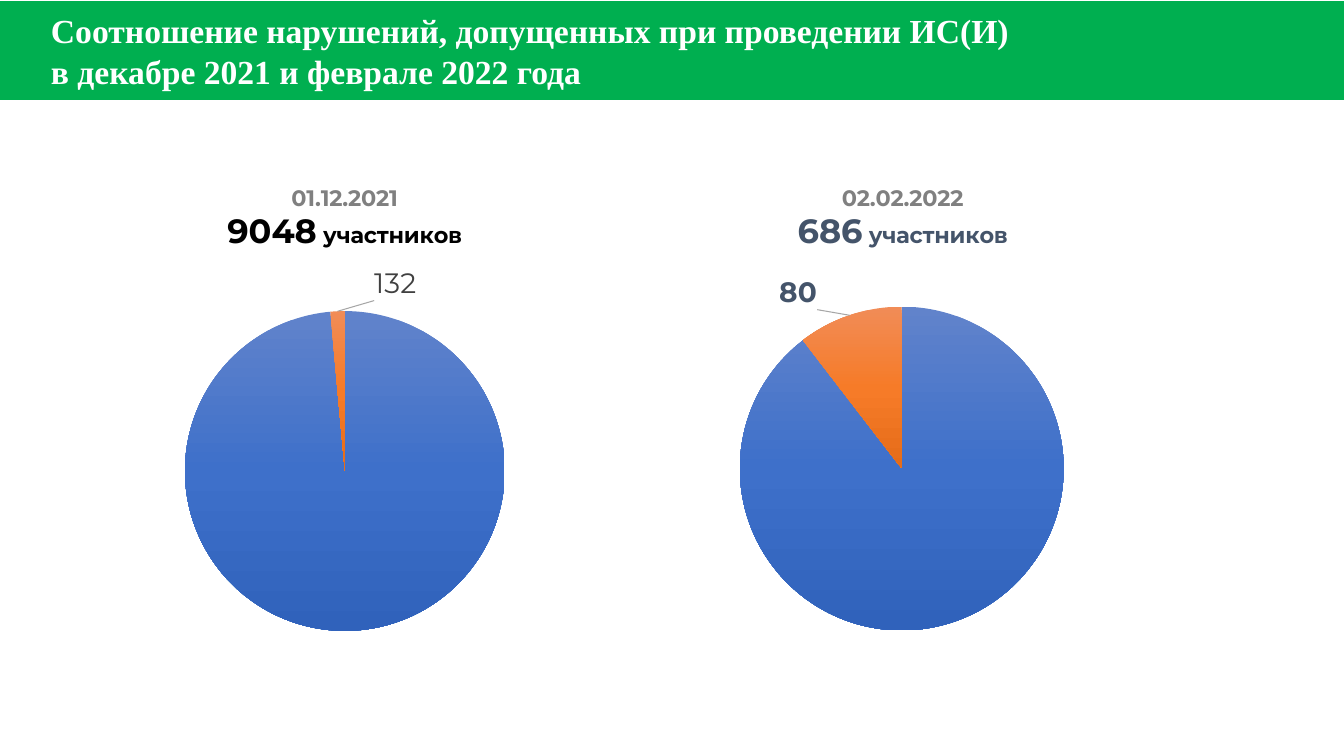
import pptx
import pptx.chart.data
import pptx.dml.color
import pptx.enum.chart
import pptx.oxml
import pptx.oxml.ns
import pptx.util
from pptx.util import Pt

COLORS = {
    "banner": "00AF50", "white": "FFFFFF", "black": "000000",
    "date": "808080", "slate": "44546A", "label": "404040", "leader": "A6A6A6",
}
SLICE_GRADIENTS = [("6183CB", "3E70CA", "3062BB"), ("F18C57", "F67B28", "E56C19")]
NS = pptx.oxml.ns.nsdecls("c", "a")


def style(font, face, size, color, bold):
    font.name, font.size, font.bold = face, Pt(size), bold
    font.color.rgb = pptx.dml.color.RGBColor.from_string(COLORS[color])


def layout_xml(inner=False, **places):
    target = '<c:layoutTarget val="inner"/><c:xMode val="edge"/><c:yMode val="edge"/>' if inner else ""
    values = "".join(f'<c:{key} val="{value}"/>' for key, value in places.items())
    return pptx.oxml.parse_xml(
        f"<c:layout {NS}><c:manualLayout>{target}{values}</c:manualLayout></c:layout>")


deck = pptx.Presentation()
deck.slide_width, deck.slide_height = Pt(960), Pt(540)
slide = deck.slides.add_slide(deck.slide_layouts[6])

# Pies: one per date, participants against violations
exams = [
    dict(date="01.12.2021", people=9048, violations=132, left=73.4, width=345.6,
         heading="black", label="label", bold=False,
         pie=dict(x=0.17, y=0.304, w=0.661, h=0.667), shift=dict(x=0.12, y=-0.01)),
    dict(date="02.02.2022", people=686, violations=80, left=427, width=435.6,
         heading="slate", label="slate", bold=True,
         pie=dict(x=0.233, y=0.295, w=0.531, h=0.675), shift=dict(x=-0.05, y=0)),
]
for exam in exams:
    data = pptx.chart.data.CategoryChartData()
    data.categories = ["1", "2"]
    data.add_series("Series 1", (exam["people"], exam["violations"]))
    chart = slide.shapes.add_chart(
        pptx.enum.chart.XL_CHART_TYPE.PIE, Pt(exam["left"]), Pt(118),
        Pt(exam["width"]), Pt(342.7), data).chart
    style(chart.font, "Calibri", 10, "black", False)
    chart.has_legend = False

    # Heading: date, then number of participants
    heading = chart.chart_title.text_frame
    date_line, people_line = heading.paragraphs[0], heading.add_paragraph()
    for line, text, size, color in [
        (date_line, exam["date"], 16, "date"),
        (people_line, str(exam["people"]), 24, exam["heading"]),
        (people_line, " участников", 16, exam["heading"]),
    ]:
        run = line.add_run()
        run.text = text
        style(run.font, "Montserrat", size, color, True)

    # Pie size and slice gradients
    plot_area = chart.plots[0]._element.getparent()
    for old in plot_area.findall(pptx.oxml.ns.qn("c:layout")):
        plot_area.remove(old)
    plot_area.insert(0, layout_xml(inner=True, **exam["pie"]))
    chart.plots[0].vary_by_categories = True
    series = chart.plots[0].series[0]
    for index, shades in enumerate(SLICE_GRADIENTS):
        stops = "".join(f'<a:gs pos="{pos}"><a:srgbClr val="{shade}"/></a:gs>'
                        for pos, shade in zip((0, 50000, 100000), shades))
        slice_format = series.points[index].format
        slice_format.line.fill.background()
        slice_format.fill.background()
        no_fill = slice_format.fill._xPr.find(pptx.oxml.ns.qn("a:noFill"))
        no_fill.getparent().replace(no_fill, pptx.oxml.parse_xml(
            f'<a:gradFill {NS} rotWithShape="1"><a:gsLst>{stops}</a:gsLst>'
            '<a:lin ang="5400000" scaled="0"/></a:gradFill>'))

    # Value label with leader line on the violations slice only
    labels = series.data_labels
    labels.show_value = True
    labels.position = pptx.enum.chart.XL_LABEL_POSITION.BEST_FIT
    style(labels.font, "Montserrat", 20, exam["label"], exam["bold"])
    count = series.points[1].data_label
    style(count.font, "Montserrat", 20, exam["label"], exam["bold"])
    count.position = pptx.enum.chart.XL_LABEL_POSITION.BEST_FIT
    labels_xml = labels._element
    labels_xml.find(pptx.oxml.ns.qn("c:dLbl")).insert(1, layout_xml(**exam["shift"]))
    labels_xml.insert(0, pptx.oxml.parse_xml(
        f'<c:dLbl {NS}><c:idx val="0"/><c:delete val="1"/></c:dLbl>'))
    for old in labels_xml.findall(pptx.oxml.ns.qn("c:showLeaderLines")):
        labels_xml.remove(old)
    labels_xml.append(pptx.oxml.parse_xml(f'<c:showLeaderLines {NS} val="1"/>'))
    labels_xml.append(pptx.oxml.parse_xml(
        f'<c:leaderLines {NS}><c:spPr><a:ln w="9525"><a:solidFill>'
        f'<a:srgbClr val="{COLORS["leader"]}"/></a:solidFill></a:ln></c:spPr></c:leaderLines>'))

# Banner across the top
outline = slide.shapes.build_freeform(0, Pt(71.3))
outline.add_line_segments([(Pt(961), Pt(71.3)), (Pt(961), Pt(0.7)), (0, Pt(0.7))], close=True)
banner = outline.convert_to_shape()
banner.shadow.inherit = False
banner.fill.solid()
banner.fill.fore_color.rgb = pptx.dml.color.RGBColor.from_string(COLORS["banner"])
banner.line.fill.background()

# Slide title
title = slide.shapes.add_textbox(Pt(36.4), Pt(6.5), Pt(912), Pt(59)).text_frame
title.word_wrap = True
title.margin_left = title.margin_right = title.margin_bottom = 0
title.margin_top = Pt(0.8)
sentence = title.paragraphs[0]
sentence.space_before = Pt(1.1)
for number, text in enumerate(["Соотношение нарушений, допущенных при проведении ИС(И)",
                               "в декабре 2021 и феврале 2022 года"]):
    if number:
        sentence.add_line_break()
    run = sentence.add_run()
    run.text = text
    style(run.font, "Times New Roman", 24, "white", True)

deck.save("out.pptx")
